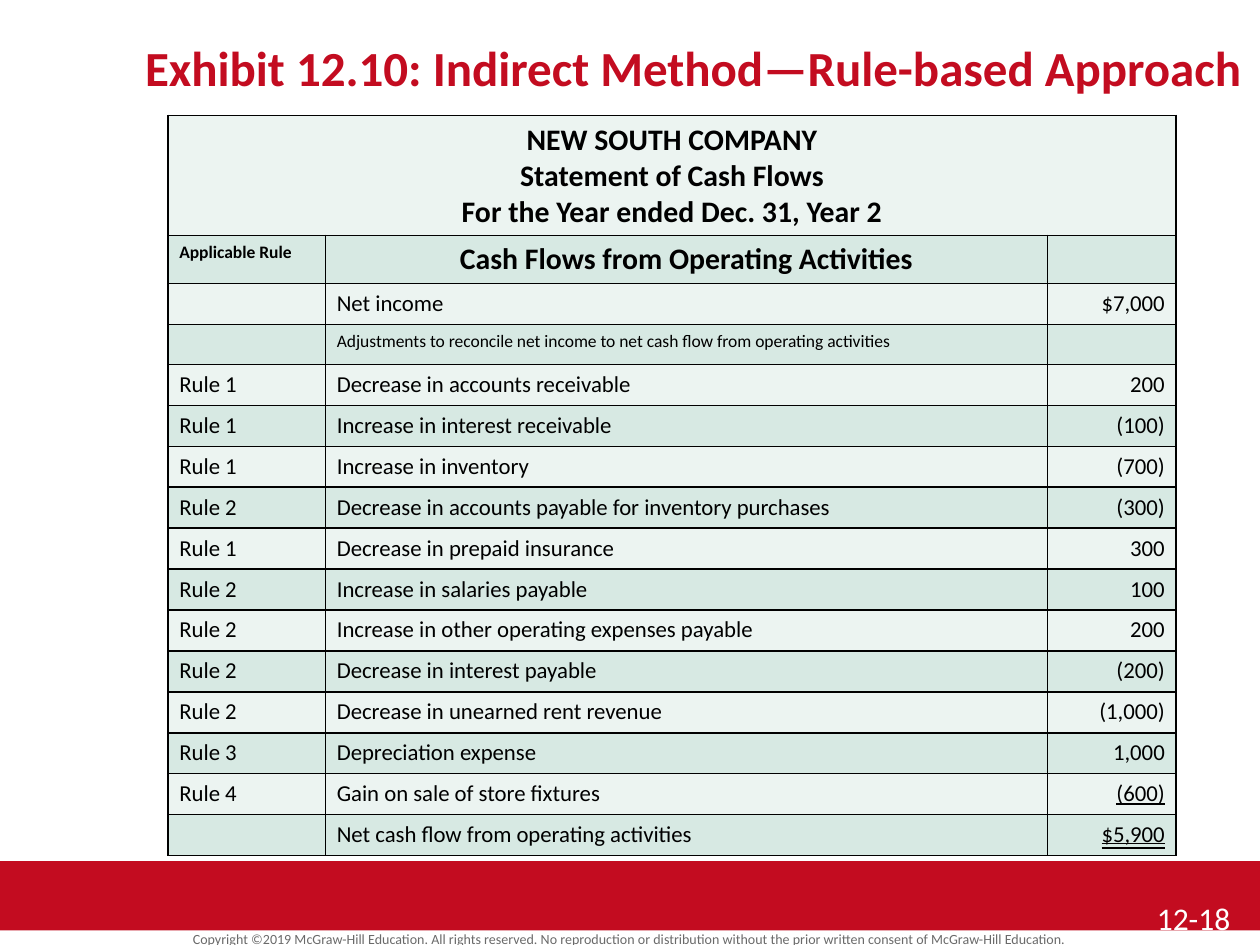
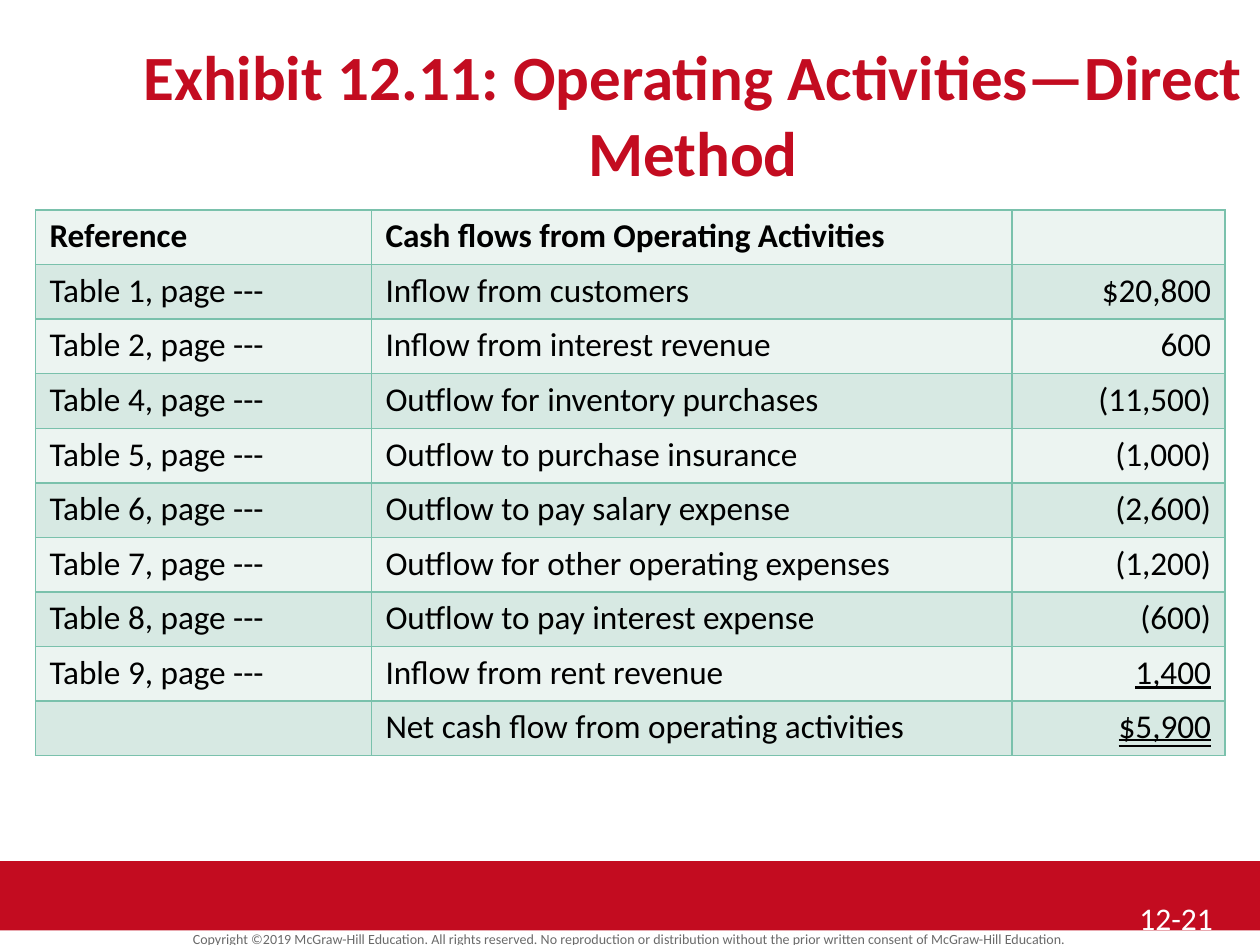
import pptx
import pptx.dml.color
import pptx.enum.shapes
import pptx.enum.text
import pptx.oxml.ns
import pptx.util
from lxml import etree

ALIGN = pptx.enum.text.PP_ALIGN
DOUBLE = pptx.enum.text.MSO_UNDERLINE.DOUBLE_LINE
TITLE_ONLY = 5
COLUMNS, ROWS = 120, 90
RED, WHITE, BLACK, GREY = "C30C20", "FFFFFF", "000000", "6A6A6A"
BANDS = ("ECF4F1", "D7E9E3")
COPYRIGHT = ("Copyright ©2019 McGraw-Hill Education. All rights reserved. "
             "No reproduction or distribution without the prior written consent "
             "of McGraw-Hill Education.")


def rgb(value):
    return pptx.dml.color.RGBColor.from_string(value)


def assign(target, values):
    for name, value in values.items():
        setattr(target, name, value)


class Deck:
    font = "Calibri"

    def __init__(self):
        self.prs = pptx.Presentation()
        self.prs.slide_width = pptx.util.Inches(10)
        self.prs.slide_height = pptx.util.Inches(7.5)
        self.s = None

    def x(self, columns):
        return int(self.prs.slide_width * columns / COLUMNS)

    def y(self, rows):
        return int(self.prs.slide_height * rows / ROWS)

    def box(self, left, top, width, height):
        return self.x(left), self.y(top), self.x(width), self.y(height)

    def lines(self, tf, text, size, color=BLACK, align=ALIGN.LEFT, **style):
        values = dict(name=self.font, size=pptx.util.Pt(size), bold=False) | style
        for i, line in enumerate(text.split("\n")):
            p = tf.paragraphs[0] if i == 0 else tf.add_paragraph()
            p.alignment = align
            if line:
                r = p.add_run()
                r.text = line
                assign(r.font, values)
                r.font.color.rgb = rgb(color)
            else:
                end = etree.SubElement(p._p, pptx.oxml.ns.qn("a:endParaRPr"))
                end.set("sz", str(size * 100))

    def slide(self, title, title_size, number, number_left, number_inset=0.1):
        self.s = self.prs.slides.add_slide(self.prs.slide_layouts[TITLE_ONLY])
        self.band(0, 82, COLUMNS, 6.6)
        self.text((0, 88.3, COLUMNS, 2.3), COPYRIGHT, 8, GREY, ALIGN.CENTER, spacing=0.8)
        self.title(title, title_size)
        self.text((number_left, 85, COLUMNS - number_left, 5), number, 18, WHITE,
                  inset=number_inset)

    def title(self, text, size):
        sp = self.s.shapes.title
        left, top, width, height = self.box(12, 3, 108, 8)
        assign(sp, dict(left=left, top=top, width=width, height=height))
        assign(sp.text_frame, dict(
            word_wrap=True,
            auto_size=pptx.enum.text.MSO_AUTO_SIZE.NONE,
            vertical_anchor=pptx.enum.text.MSO_ANCHOR.TOP))
        self.lines(sp.text_frame, text, size, RED, ALIGN.CENTER, bold=True)

    def band(self, *place):
        sp = self.s.shapes.add_shape(pptx.enum.shapes.MSO_SHAPE.RECTANGLE, *self.box(*place))
        sp.shadow.inherit = False
        sp.fill.solid()
        sp.fill.fore_color.rgb = rgb(RED)
        sp.line.fill.background()

    def text(self, place, text, size, color, align=ALIGN.LEFT, inset=0.1, spacing=1.0):
        tf = self.s.shapes.add_textbox(*self.box(*place)).text_frame
        assign(tf, dict(word_wrap=True, margin_left=pptx.util.Inches(inset)))
        self.lines(tf, text, size, color, align)
        tf.paragraphs[0].line_spacing = spacing

    def border(self, cell, color):
        qn = pptx.oxml.ns.qn
        tc_pr = cell._tc.get_or_add_tcPr()
        for side in ("L", "R", "T", "B"):
            ln = etree.SubElement(tc_pr, qn(f"a:ln{side}"), w=str(int(pptx.util.Pt(1))))
            fill = etree.SubElement(ln, qn("a:solidFill"))
            etree.SubElement(fill, qn("a:srgbClr"), val=color)

    def table(self, left, top, widths, heights, data, size, line, inset, styles):
        place = self.box(left, top, sum(widths), sum(heights))
        table = self.s.shapes.add_table(len(data), len(widths), *place).table
        assign(table, dict(first_row=False, horz_banding=False))
        for column, width in zip(table.columns, widths):
            column.width = self.x(width)
        for row, height in zip(table.rows, heights):
            row.height = self.y(height)
        for i, values in enumerate(data):
            for j, value in enumerate(values):
                cell = table.cell(i, j)
                self.border(cell, line)
                cell.fill.solid()
                cell.fill.fore_color.rgb = rgb(BANDS[i % 2])
                assign(cell, dict.fromkeys(("margin_left", "margin_right"),
                                           pptx.util.Inches(inset)))
                style = dict(size=size, align=ALIGN.RIGHT if j == 2 else ALIGN.LEFT)
                self.lines(cell.text_frame, value, **(style | styles.get((i, j), {})))
        return table


INDIRECT = [
    ("NEW SOUTH COMPANY\nStatement of Cash Flows\nFor the Year ended Dec. 31, Year 2", "", ""),
    ("Applicable Rule", "Cash Flows from Operating Activities", ""),
    ("", "Net income", "$7,000"),
    ("", "Adjustments to reconcile net income to net cash flow from operating activities", ""),
    ("Rule 1", "Decrease in accounts receivable", "200"),
    ("Rule 1", "Increase in interest receivable", "(100)"),
    ("Rule 1", "Increase in inventory", "(700)"),
    ("Rule 2", "Decrease in accounts payable for inventory purchases", "(300)"),
    ("Rule 1", "Decrease in prepaid insurance", "300"),
    ("Rule 2", "Increase in salaries payable", "100"),
    ("Rule 2", "Increase in other operating expenses payable", "200"),
    ("Rule 2", "Decrease in interest payable", "(200)"),
    ("Rule 2", "Decrease in unearned rent revenue", "(1,000)"),
    ("Rule 3", "Depreciation expense", "1,000"),
    ("Rule 4", "Gain on sale of store fixtures", "(600)"),
    ("", "Net cash flow from operating activities", "$5,900"),
]

DIRECT = [
    ("Reference", "Cash flows from Operating Activities", ""),
    ("Table 1, page ---", "Inflow from customers", "$20,800"),
    ("Table 2, page ---", "Inflow from interest revenue", "600"),
    ("Table 4, page ---", "Outflow for inventory purchases", "(11,500)"),
    ("Table 5, page ---", "Outflow to purchase insurance", "(1,000)"),
    ("Table 6, page ---", "Outflow to pay salary expense", "(2,600)"),
    ("Table 7, page ---", "Outflow for other operating expenses", "(1,200)"),
    ("Table 8, page ---", "Outflow to pay interest expense", "(600)"),
    ("Table 9, page ---", "Inflow from rent revenue", "1,400"),
    ("", "Net cash flow from operating activities", "$5,900"),
]


def total_styles(data):
    last = len(data) - 1
    return {(last - 1, 2): dict(underline=True), (last, 2): dict(underline=DOUBLE)}


def indirect_method(deck):
    deck.slide("Exhibit 12.10: Indirect Method—Rule-based Approach", 28, "12-18", 109)
    heading = dict(size=17, bold=True, align=ALIGN.CENTER)
    styles = total_styles(INDIRECT) | {(3, j): dict(size=10) for j in range(3)} | {
        (0, 0): heading,
        (1, 0): dict(size=10, bold=True),
        (1, 1): heading,
    }
    heights = [11.3, 4.6, 3.9, 3.8] + [3.9] * (len(INDIRECT) - 4)
    table = deck.table(16, 11, (15, 68.75, 12.25), heights, INDIRECT, 13, BLACK, 0.09, styles)
    table.cell(0, 0).merge(table.cell(0, 2))


def direct_method(deck):
    deck.slide("Exhibit 12.11: Operating Activities—Direct Method", 36, "12-21", 106, 0.21)
    styles = total_styles(DIRECT) | {(0, j): dict(bold=True) for j in (0, 1)}
    deck.table(3.4, 20, (32, 61, 20.25), [5.2] * len(DIRECT), DIRECT, 19, "7AC1AC", 0.11, styles)


def main():
    deck = Deck()
    indirect_method(deck)
    direct_method(deck)
    deck.prs.save("out.pptx")


if __name__ == "__main__":
    main()
